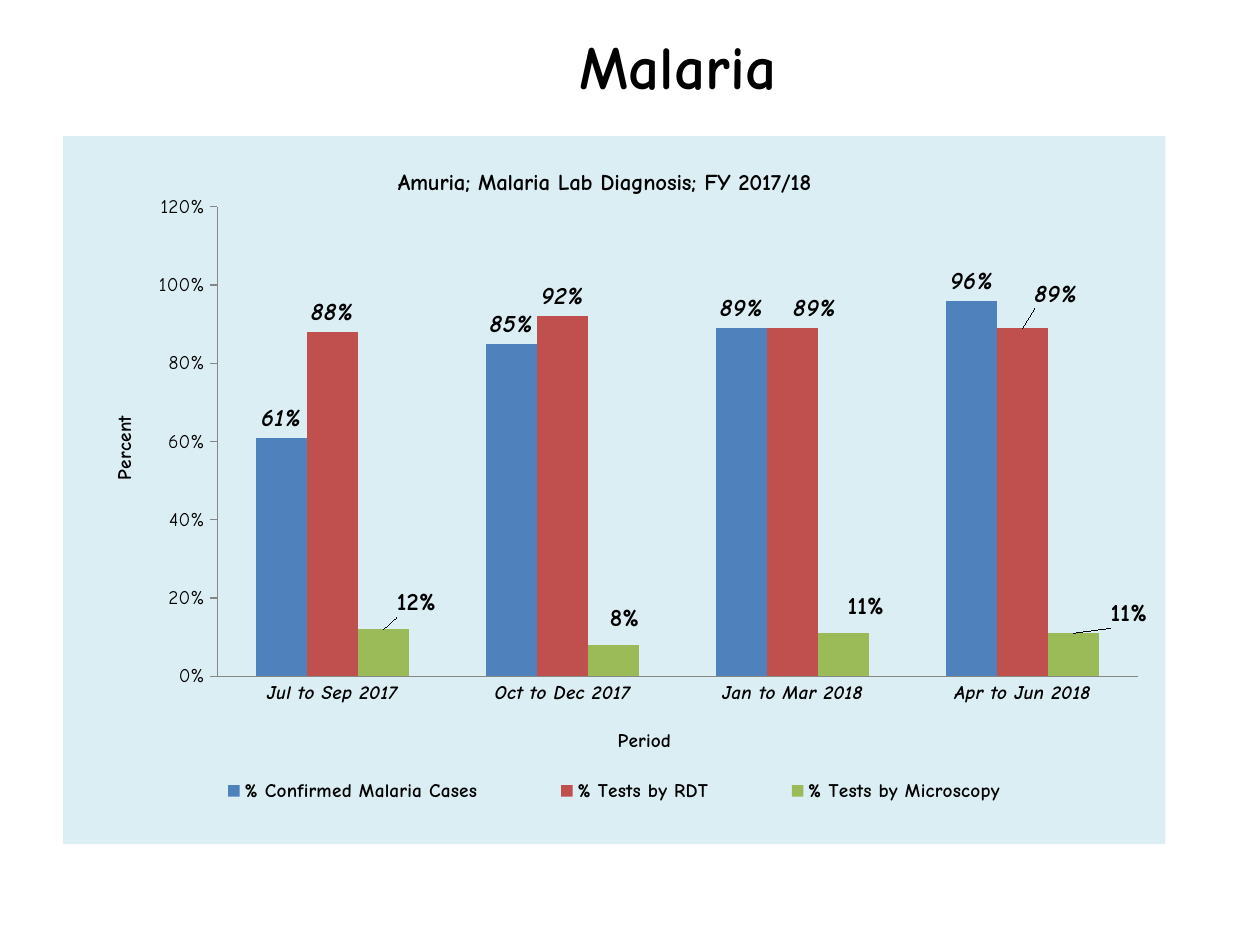
from lxml import etree
from pptx import Presentation
from pptx.chart.data import CategoryChartData
from pptx.dml.color import RGBColor
from pptx.enum.chart import (
    XL_CHART_TYPE as ChartType,
    XL_LABEL_POSITION as LabelPosition,
    XL_LEGEND_POSITION as LegendPosition,
    XL_TICK_MARK as TickMark,
)
from pptx.enum.text import MSO_ANCHOR, PP_ALIGN
from pptx.oxml.ns import qn
from pptx.util import Inches, Pt

FONT = "Comic Neue"
COLORS = {
    "text": "000000",
    "background": "FFFFFF",
    "panel": "DBEEF4",
    "axis": "868686",
    "confirmed": "4F81BD",
    "rdt": "C0504D",
    "microscopy": "9BBB59",
}
PERIODS = ["Jul to Sep 2017", "Oct to Dec 2017", "Jan to Mar 2018", "Apr to Jun 2018"]
# Name, colour, values, italic labels, label shifts as fractions of the chart
SERIES = [
    ("% Confirmed Malaria Cases", "confirmed", (0.61, 0.85, 0.89, 0.96), True, {}),
    ("% Tests by RDT", "rdt", (0.88, 0.92, 0.89, 0.89), True,
     {2: (0.02, 0), 3: (0.03, -0.02)}),
    ("% Tests by Microscopy", "microscopy", (0.12, 0.08, 0.11, 0.11), False,
     {0: (0.03, -0.01), 1: (0.01, -0.01), 2: (0.02, -0.01), 3: (0.05, 0)}),
]


def color(name):
    return RGBColor.from_string(COLORS[name])


def format_font(font, size=11, bold=False, italic=False):
    font.name = FONT
    font.size = Pt(size)
    font.bold = bold
    font.italic = italic
    font.color.rgb = color("text")


def write_text(frame, text, align=PP_ALIGN.CENTER, **font_format):
    paragraph = frame.paragraphs[0]
    paragraph.alignment = align
    run = paragraph.add_run()
    run.text = text
    format_font(run.font, **font_format)


def set_layout(element, edge=True, inner=False, **lengths):
    """Place a chart part by hand, in fractions of the chart's size."""
    for old in element.findall(qn("c:layout")):
        element.remove(old)
    layout = etree.Element(qn("c:layout"))
    manual = etree.SubElement(layout, qn("c:manualLayout"))
    if inner:
        etree.SubElement(manual, qn("c:layoutTarget"), val="inner")
    if edge:
        for mode in ("xMode", "yMode"):
            etree.SubElement(manual, qn(f"c:{mode}"), val="edge")
    for name, value in lengths.items():
        etree.SubElement(manual, qn(f"c:{name}"), val=str(value))
    leading = {qn("c:idx"), qn("c:tx"), qn("c:legendPos")}
    element.insert(sum(child.tag in leading for child in element), layout)


def add_title(slide, left, top, width, height):
    title = slide.shapes.title
    title.left, title.top, title.width, title.height = left, top, width, height
    title.text_frame.vertical_anchor = MSO_ANCHOR.MIDDLE
    write_text(title.text_frame, "Malaria", size=35, bold=True)


def format_series(series, fill, italic, shifts):
    series.format.fill.solid()
    series.format.fill.fore_color.rgb = color(fill)
    labels = series.data_labels
    labels.show_value = True
    labels.number_format = "0%"
    labels.number_format_is_linked = False
    labels.position = LabelPosition.OUTSIDE_END
    format_font(labels.font, size=14, bold=True, italic=italic)
    for index, (x, y) in shifts.items():
        label = series.points[index].data_label
        label.position = LabelPosition.OUTSIDE_END
        format_font(label.font, size=14, bold=True, italic=italic)
    for element in labels._element.findall(qn("c:dLbl")):
        x, y = shifts[int(element.find(qn("c:idx")).get("val"))]
        set_layout(element, edge=False, x=x, y=y)


def format_axis(axis, title, tick, x, y, **font_format):
    axis.has_major_gridlines = False
    axis.major_tick_mark = tick
    axis.minor_tick_mark = TickMark.NONE
    axis.format.line.color.rgb = color("axis")
    axis.format.line.width = Pt(0.75)
    format_font(axis.tick_labels.font, **font_format)
    write_text(axis.axis_title.text_frame, title, bold=True)
    set_layout(axis.axis_title._element, x=x, y=y)


def add_diagnosis_chart(slide, left, top, width, height):
    data = CategoryChartData(number_format="0%")
    data.categories = PERIODS
    for name, _, values, _, _ in SERIES:
        data.add_series(name, values)
    chart = slide.shapes.add_chart(
        ChartType.COLUMN_CLUSTERED, left, top, width, height, data).chart
    format_font(chart.font)

    chart_space = chart._chartSpace
    panel = etree.Element(qn("c:spPr"))
    fill = etree.SubElement(panel, qn("a:solidFill"))
    etree.SubElement(fill, qn("a:srgbClr"), val=COLORS["panel"])
    etree.SubElement(etree.SubElement(panel, qn("a:ln")), qn("a:noFill"))
    chart_space.find(qn("c:chart")).addnext(panel)

    write_text(chart.chart_title.text_frame,
               "Amuria; Malaria Lab Diagnosis; FY 2017/18", size=13, bold=True)
    set_layout(chart.chart_title._element, x=0.3, y=0.04)

    plot = chart.plots[0]
    plot.gap_width = 150
    plot.overlap = 0
    plot.vary_by_categories = False
    for series, (_, fill_name, _, italic, shifts) in zip(plot.series, SERIES):
        format_series(series, fill_name, italic, shifts)
    set_layout(chart_space.find(".//" + qn("c:plotArea")), inner=True,
               x=0.14, y=0.1, w=0.835, h=0.663)

    format_axis(chart.category_axis, "Period", TickMark.NONE, x=0.5, y=0.83,
                bold=True, italic=True)
    format_axis(chart.value_axis, "Percent", TickMark.OUTSIDE, x=0.04, y=0.39)
    chart.value_axis.minimum_scale = 0
    chart.value_axis.maximum_scale = 1.2
    chart.value_axis.major_unit = 0.2
    chart.value_axis.tick_labels.number_format = "0%"
    chart.value_axis.tick_labels.number_format_is_linked = False

    chart.has_legend = True
    chart.legend.position = LegendPosition.BOTTOM
    chart.legend.include_in_layout = False
    format_font(chart.legend.font, bold=True)
    set_layout(chart.legend._element, x=0.08, y=0.89, w=0.84, h=0.07)


def main():
    presentation = Presentation()
    presentation.slide_width = Inches(10)
    presentation.slide_height = Inches(7.5)
    slide = presentation.slides.add_slide(presentation.slide_layouts[5])
    slide.background.fill.solid()
    slide.background.fill.fore_color.rgb = color("background")
    add_title(slide, Inches(1.17), Inches(0.13), Inches(8.42), Inches(0.78))
    add_diagnosis_chart(slide, Inches(0.5), Inches(1.08), Inches(8.75), Inches(5.62))
    presentation.save("out.pptx")


if __name__ == "__main__":
    main()
